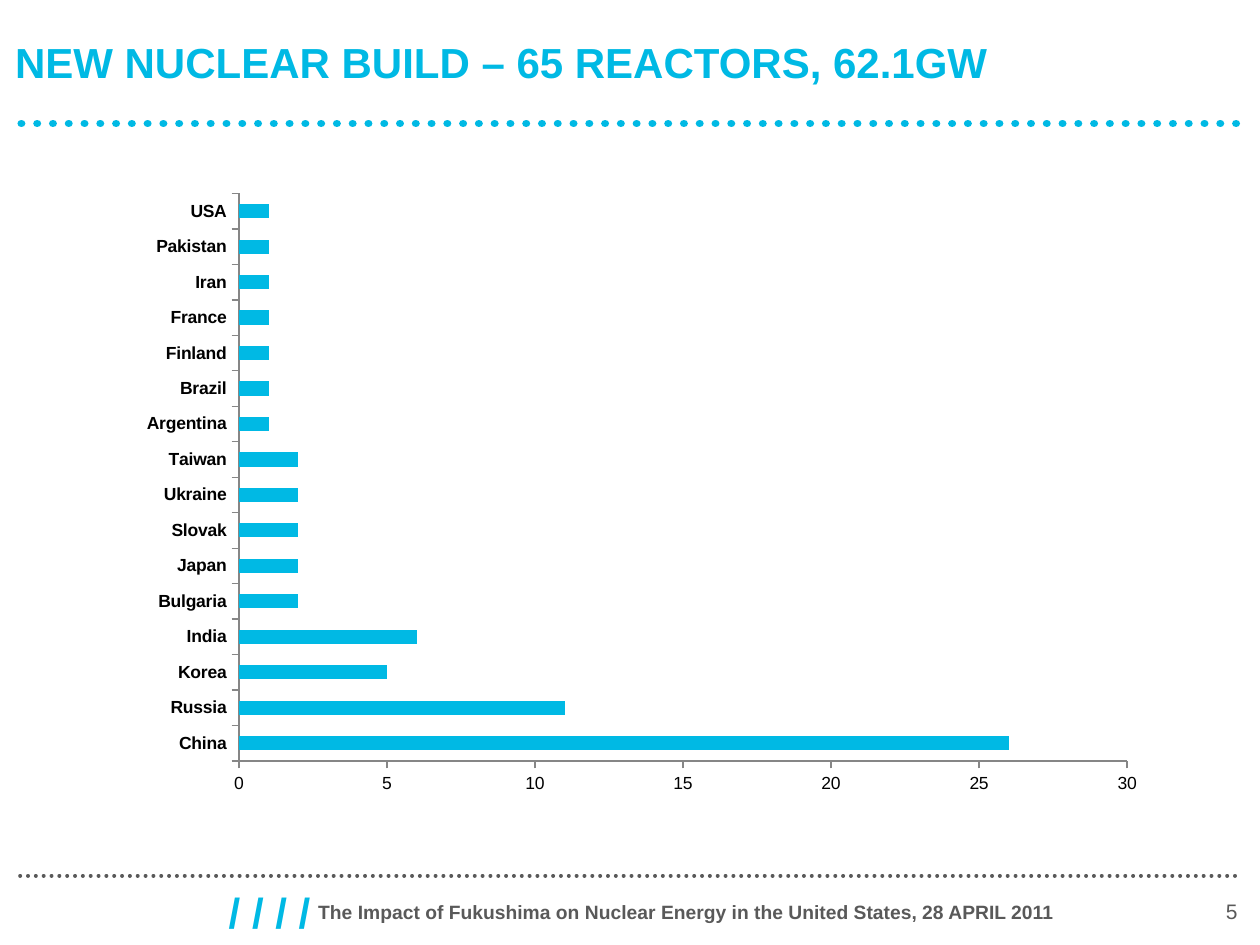
from dataclasses import dataclass

from lxml import etree
from pptx import Presentation
from pptx import util as u
from pptx.chart.data import CategoryChartData
from pptx.dml.color import RGBColor
from pptx.enum import chart as charts
from pptx.enum import dml, shapes, text
from pptx.oxml import parse_xml
from pptx.oxml.ns import nsdecls, qn

COLORS = {"cyan": "00B9E4", "grey": "595959", "axis": "868686", "black": "000000", "white": "FFFFFF"}
FONT = "Arial"
COLUMNS, ROWS = 100, 75
REACTORS = {
    "China": 26, "Russia": 11, "Korea": 5, "India": 6,
    "Bulgaria": 2, "Japan": 2, "Slovak": 2, "Ukraine": 2, "Taiwan": 2,
    "Argentina": 1, "Brazil": 1, "Finland": 1, "France": 1, "Iran": 1,
    "Pakistan": 1, "USA": 1,
}
PLOT_LAYOUT = {"x": 0.153, "y": 0.02, "w": 0.813, "h": 0.85}

deck = Presentation()
deck.slide_width, deck.slide_height = u.Inches(10), u.Inches(7.5)
slide = deck.slides.add_slide(deck.slide_layouts[6])


@dataclass(frozen=True)
class Area:
    column: float
    row: float
    columns: float
    rows: float

    def lengths(self) -> tuple[int, int, int, int]:
        return across(self.column), down(self.row), across(self.columns), down(self.rows)


@dataclass(frozen=True)
class Label:
    wording: str
    area: Area
    size: float
    color: str
    bold: bool = True
    rounded: bool = False
    align: text.PP_ALIGN = text.PP_ALIGN.LEFT
    insets: tuple[float, float, float, float] = (0, 0.04, 0, 0.04)


@dataclass(frozen=True)
class DottedRule:
    column: float
    row: float
    columns: float
    color: str
    weight: float


def across(columns: float) -> int:
    return round(deck.slide_width * columns / COLUMNS)


def down(rows: float) -> int:
    return round(deck.slide_height * rows / ROWS)


def rgb(name: str) -> RGBColor:
    return RGBColor.from_string(COLORS[name])


def set_font(font, size: float, color: str, bold: bool) -> None:
    font.name, font.size, font.bold = FONT, u.Pt(size), bold
    font.color.rgb = rgb(color)


def draw_label(label: Label) -> None:
    if label.rounded:
        holder = slide.shapes.add_shape(shapes.MSO_SHAPE.ROUNDED_RECTANGLE, *label.area.lengths())
        holder.shadow.inherit = False
        holder.fill.background()
        holder.line.fill.background()
    else:
        holder = slide.shapes.add_textbox(*label.area.lengths())
    frame = holder.text_frame
    frame.word_wrap = True
    frame.vertical_anchor = text.MSO_ANCHOR.MIDDLE
    frame.margin_left, frame.margin_top, frame.margin_right, frame.margin_bottom = map(u.Inches, label.insets)
    paragraph = frame.paragraphs[0]
    paragraph.text = label.wording
    paragraph.alignment = label.align
    set_font(paragraph.font, label.size, label.color, label.bold)


def draw_rule(rule: DottedRule) -> None:
    y = down(rule.row)
    connector = slide.shapes.add_connector(
        shapes.MSO_CONNECTOR.STRAIGHT, across(rule.column), y, across(rule.column + rule.columns), y)
    connector.line.color.rgb = rgb(rule.color)
    connector.line.width = u.Pt(rule.weight)
    connector.line.dash_style = dml.MSO_LINE.ROUND_DOT
    properties = connector._element.spPr
    properties.find(qn("a:ln")).set("cap", "rnd")
    etree.SubElement(properties, qn("a:effectLst"))


def style_axis(axis, bold: bool) -> None:
    axis.has_major_gridlines = False
    axis.major_tick_mark = charts.XL_TICK_MARK.OUTSIDE
    axis.minor_tick_mark = charts.XL_TICK_MARK.NONE
    axis.format.line.color.rgb = rgb("axis")
    axis.format.line.width = u.Pt(0.75)
    set_font(axis.tick_labels.font, 10, "black", bold)


def place_plot(chart, shares: dict[str, float]) -> None:
    plot_area = chart._chartSpace.chart.plotArea
    for old in plot_area.findall(qn("c:layout")):
        plot_area.remove(old)
    modes = '<c:layoutTarget val="inner"/><c:xMode val="edge"/><c:yMode val="edge"/>'
    sizes = "".join(f'<c:{key} val="{share}"/>' for key, share in shares.items())
    plot_area.insert(0, parse_xml(
        f'<c:layout {nsdecls("c")}><c:manualLayout>{modes}{sizes}</c:manualLayout></c:layout>'))


def draw_reactor_chart(area: Area) -> None:
    reactors = CategoryChartData()
    reactors.categories = list(REACTORS)
    reactors.add_series("Series 1", list(REACTORS.values()))
    chart = slide.shapes.add_chart(charts.XL_CHART_TYPE.BAR_STACKED, *area.lengths(), reactors).chart
    chart.has_legend = chart.has_title = False
    set_font(chart.font, 10, "black", False)
    style_axis(chart.category_axis, True)
    style_axis(chart.value_axis, False)
    chart.value_axis.minimum_scale, chart.value_axis.maximum_scale = 0, 30
    chart.value_axis.major_unit = 5
    bars = chart.plots[0]
    bars.gap_width, bars.overlap, bars.vary_by_categories = 150, 100, False
    fill = bars.series[0].format.fill
    fill.solid()
    fill.fore_color.rgb = rgb("cyan")
    place_plot(chart, PLOT_LAYOUT)


FOOTER_ROW, FOOTER_ROWS = 69.7, 5.3
LABELS = [
    Label("The Impact of Fukushima on Nuclear Energy in the United States, 28 APRIL 2011",
          Area(25, FOOTER_ROW, 63.9, FOOTER_ROWS), 11, "grey", rounded=True),
    Label("5", Area(84.3, FOOTER_ROW, 14.9, FOOTER_ROWS), 12, "grey", bold=False,
          align=text.PP_ALIGN.RIGHT, insets=(0.1, 0.05, 0.1, 0.05)),
    Label("/ / / /", Area(17.9, FOOTER_ROW, 15.3, FOOTER_ROWS), 24, "cyan", rounded=True),
    Label("NEW NUCLEAR BUILD – 65 REACTORS, 62.1GW", Area(1.2, 0, 97.3, 9.8), 24, "cyan",
          insets=(0, 0.05, 0.1, 0.05)),
]
RULES = [
    DottedRule(1.6, 69.5, 96.7, "grey", 2.25),
    DottedRule(1.7, 9.8, 96.7, "cyan", 4.5),
]

backdrop = slide.background.fill
backdrop.solid()
backdrop.fore_color.rgb = rgb("white")
for label in LABELS:
    draw_label(label)
for rule in RULES:
    draw_rule(rule)
draw_reactor_chart(Area(5.7, 14.3, 86.7, 53))
deck.save("out.pptx")
